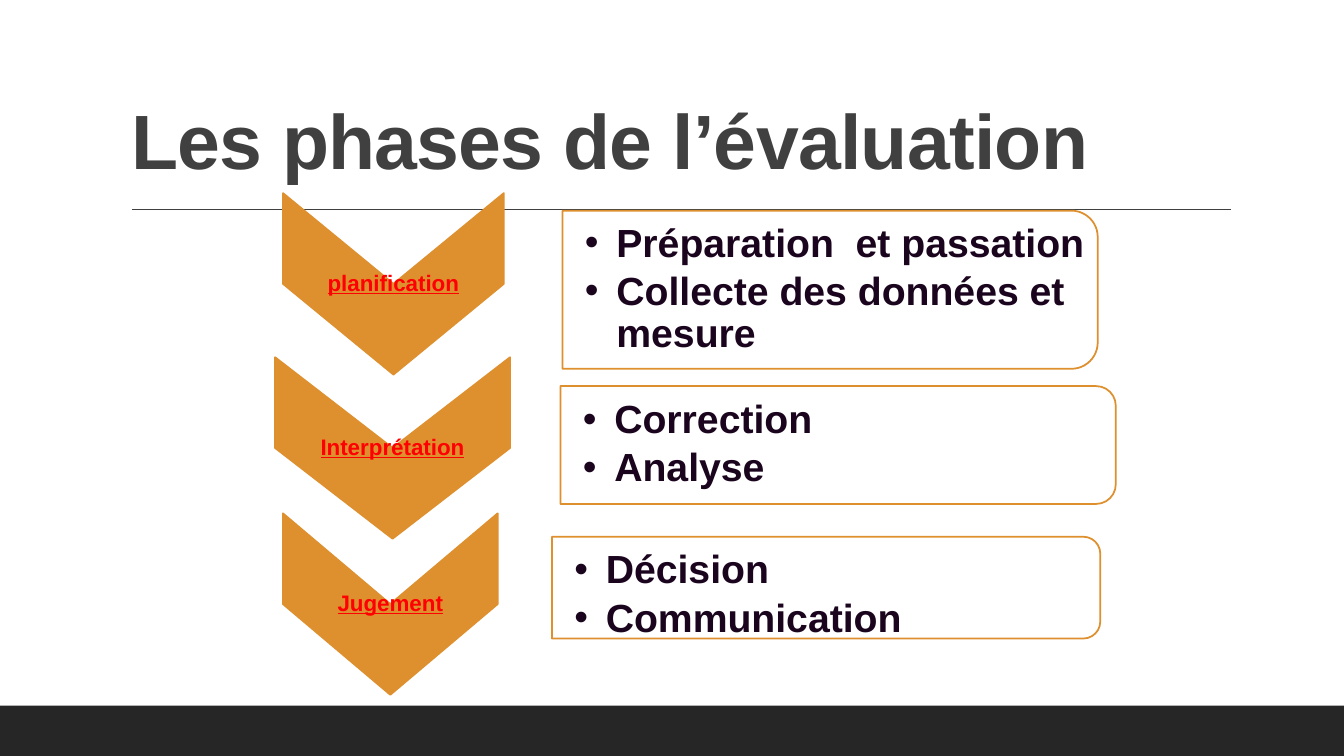
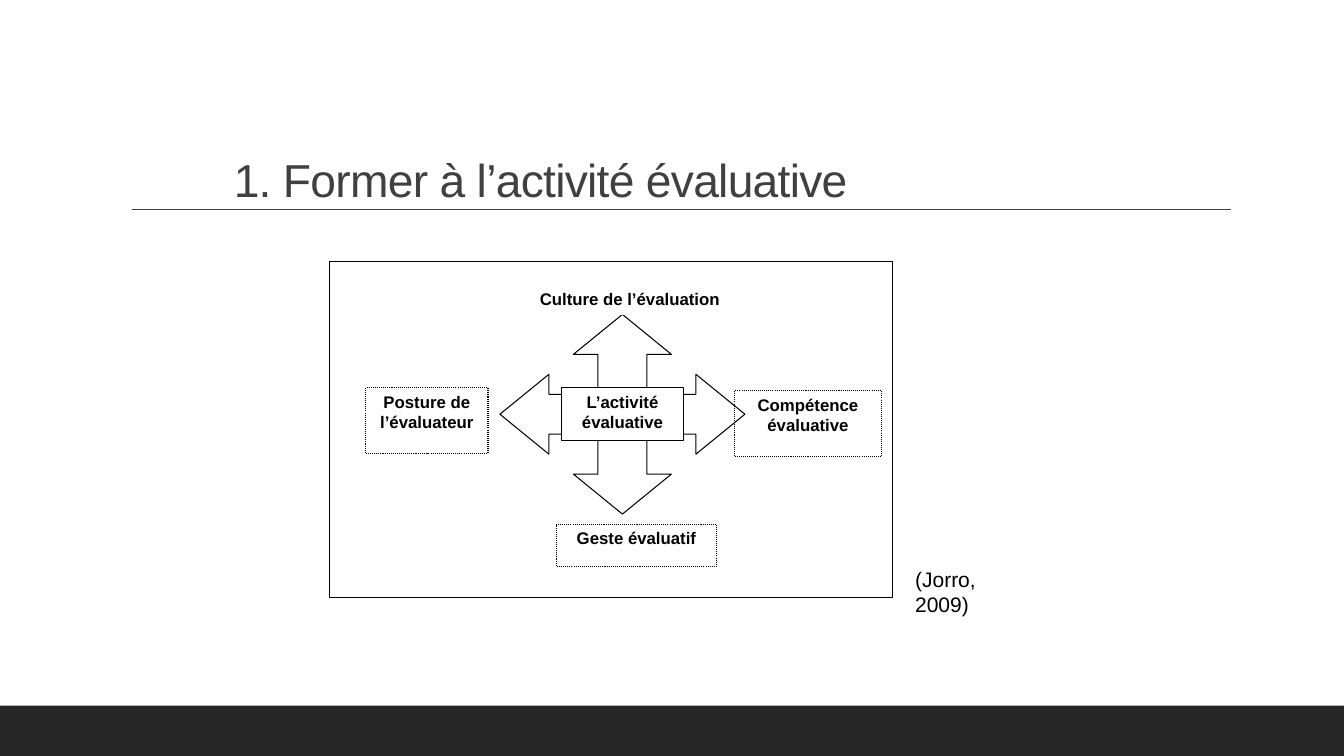
from lxml.etree import SubElement
from pptx import Presentation
from pptx.dml.color import RGBColor
from pptx.enum.dml import MSO_LINE
from pptx.enum.shapes import MSO_CONNECTOR, MSO_SHAPE
from pptx.enum.text import MSO_ANCHOR, MSO_AUTO_SIZE, PP_ALIGN
from pptx.oxml.ns import qn
from pptx.util import Pt

COLORS = {
    "paper": "FFFFFF",
    "band": "262626",
    "title": "404040",
    "accent": "DE8F2E",
    "label": "FF0000",
    "list": "1B051E",
    "ink": "000000",
}
FONT = "Arial"
COMPARISON_LAYOUT = 4
TITLE_ONLY_LAYOUT = 5


def color(name):
    return RGBColor.from_string(COLORS[name])


class Deck:
    def __init__(self):
        self.presentation = Presentation()
        self.presentation.slide_width = Pt(960)
        self.presentation.slide_height = Pt(540)
        self.slide = None

    def add_slide(self, layout_index):
        layout = self.presentation.slide_layouts[layout_index]
        self.slide = self.presentation.slides.add_slide(layout)

    def decorate_master(self):
        band = self.shape(MSO_SHAPE.RECTANGLE, (0, 504, 960, 36), "band")
        rule = self.slide.shapes.add_connector(
            MSO_CONNECTOR.STRAIGHT, Pt(94.3), Pt(149.8), Pt(879.1), Pt(149.8)
        )
        rule.line.color.rgb = color("title")
        rule.line.width = Pt(1)
        SubElement(rule.element.spPr, qn("a:effectLst"))
        master_tree = self.presentation.slide_master.shapes.element
        for number, item in enumerate((band, rule)):
            item.element.xpath(".//p:cNvPr")[0].set("id", str(100 + number))
            master_tree.insert(2 + number, item.element)

    def place(self, shape, box):
        shape.left, shape.top, shape.width, shape.height = map(Pt, box)

    def paint(self, shape, fill=None, line=None, width=0.75, dotted=False):
        shape.shadow.inherit = False
        if fill:
            shape.fill.solid()
            shape.fill.fore_color.rgb = color(fill)
        else:
            shape.fill.background()
        if line:
            shape.line.color.rgb = color(line)
            shape.line.width = Pt(width)
            if dotted:
                shape.line.dash_style = MSO_LINE.ROUND_DOT
        else:
            shape.line.fill.background()

    def shape(self, kind, box, fill=None, line=None, width=0.75, dotted=False):
        shape = self.slide.shapes.add_shape(kind, *map(Pt, box))
        self.paint(shape, fill, line, width, dotted)
        return shape

    def turned_shape(self, kind, box, fill):
        left, top, width, height = box
        shift = (width - height) / 2
        turned_box = (left + shift, top - shift, height, width)
        shape = self.shape(kind, turned_box, fill, "accent", 1.25)
        shape.rotation = 90

    def frame(self, shape, anchor=MSO_ANCHOR.TOP, insets=(7.2, 3.6, 7.2, 3.6)):
        frame = shape.text_frame
        frame.word_wrap = True
        frame.auto_size = MSO_AUTO_SIZE.NONE
        frame.vertical_anchor = anchor
        frame.margin_left, frame.margin_top, frame.margin_right, frame.margin_bottom = map(Pt, insets)
        return frame

    def add_text(self, frame, lines, size, ink, bold=False, underline=False,
                 align=PP_ALIGN.LEFT, spacing=1.0, after=0):
        paragraphs = []
        for number, line in enumerate(lines):
            paragraph = frame.add_paragraph() if number else frame.paragraphs[0]
            paragraph.alignment = align
            paragraph.line_spacing = spacing
            paragraph.space_before = Pt(0)
            paragraph.space_after = Pt(after)
            run = paragraph.add_run()
            run.text = line
            run.font.name = FONT
            run.font.size = Pt(size)
            run.font.bold = bold
            run.font.underline = underline
            run.font.color.rgb = color(ink)
            paragraphs.append(paragraph)
        return paragraphs

    def title(self, text, box, size, bold=False):
        title = self.slide.shapes.title
        self.place(title, box)
        frame = self.frame(title, MSO_ANCHOR.BOTTOM)
        paragraph = self.add_text(frame, [text], size, "title", bold, spacing=0.9)[0]
        paragraph.runs[0]._r.get_or_add_rPr().set("spc", "-50")

    def text_box(self, lines, box, size, ink, anchor=MSO_ANCHOR.TOP,
                 insets=(7.2, 3.6, 7.2, 3.6), **style):
        text_box = self.slide.shapes.add_textbox(*map(Pt, box))
        self.add_text(self.frame(text_box, anchor, insets), lines, size, ink, **style)

    def chevron(self, label, center_x, center_y, width):
        height = 129.6
        box = (center_x - width / 2, center_y - height / 2, width, height)
        self.turned_shape(MSO_SHAPE.CHEVRON, box, "accent")
        self.text_box([label], box, 16, "label", MSO_ANCHOR.MIDDLE, (0.7,) * 4,
                      bold=True, underline=True, align=PP_ALIGN.CENTER, spacing=0.9)

    def bullet_card(self, placeholder_index, items, box, text_shift):
        self.turned_shape(MSO_SHAPE.ROUND_2_SAME_RECTANGLE, box, "paper")
        left, top, width, height = box
        body = self.slide.placeholders[placeholder_index]
        self.place(body, (left, top + text_shift, width - 5, height))
        self.slide.shapes.element.append(body.element)
        frame = self.frame(body, MSO_ANCHOR.MIDDLE, (16, 1.4, 1.4, 1.4))
        for paragraph in self.add_text(frame, items, 28, "list", True, spacing=0.9, after=4.2):
            properties = paragraph._p.get_or_add_pPr()
            properties.set("marL", str(Pt(22.5)))
            properties.set("indent", str(-Pt(22.5)))
            SubElement(properties, qn("a:buFont")).set("typeface", FONT)
            SubElement(properties, qn("a:buChar")).set("char", "•")

    def label_box(self, lines, box, fill="paper", line="ink", dotted=False):
        shape = self.shape(MSO_SHAPE.RECTANGLE, box, fill, line, dotted=dotted)
        frame = self.frame(shape, insets=(5, 2.9, 5, 2.9))
        self.add_text(frame, lines, 12, "ink", True, align=PP_ALIGN.CENTER)

    def four_way_arrow(self, center_x, center_y, half_width, half_height):
        arm = [(-0.2, -0.2), (-0.2, -0.6), (-0.4, -0.6), (0, -1), (0.4, -0.6), (0.2, -0.6)]
        outline = []
        for _ in range(4):
            outline += arm
            arm = [(-y, x) for x, y in arm]
        points = [(Pt(center_x + x * half_width), Pt(center_y + y * half_height))
                  for x, y in outline]
        builder = self.slide.shapes.build_freeform(*points[0])
        builder.add_line_segments(points[1:], close=True)
        self.paint(builder.convert_to_shape(), "paper", "ink")


def phases_slide(deck):
    deck.title("Les phases de l’évaluation", (86.4, 22.3, 792, 114.5), 55, True)
    phases = [
        (("planification", 281, 202.8, 157.7), 2,
         ["Préparation  et passation", "Collecte des données et mesure"],
         (401.8, 150.5, 382.3, 113), 0),
        (("Interprétation", 280.4, 320, 167.8), 3,
         ["Correction", "Analyse"], (400.3, 275.8, 396.7, 84.2), 0),
        (("Jugement", 278.8, 431.5, 153.4), 4,
         ["Décision", "Communication"], (394.2, 383.4, 391.7, 72.7), 5.5),
    ]
    for chevron, *card in phases:
        deck.chevron(*chevron)
        deck.bullet_card(*card)
    unused = deck.slide.placeholders[1].element
    unused.getparent().remove(unused)


def activity_slide(deck):
    deck.title("1. Former à l’activité évaluative", (159.8, 103.7, 507.6, 48.2), 33)
    deck.shape(MSO_SHAPE.RECTANGLE, (235.4, 187, 402, 240), "paper", "ink")
    deck.four_way_arrow(444.6, 295.9, 87.5, 71.3)
    deck.label_box(["Posture de l’évaluateur"], (261.2, 277, 87.4, 47), dotted=True)
    deck.label_box(["Compétence", "évaluative"], (524.7, 279.2, 105, 47.2),
                   fill=None, dotted=True)
    deck.label_box(["Culture de l’évaluation"], (375, 203, 149.8, 21.8), line="paper")
    deck.label_box(["L’activité évaluative"], (401, 277, 87.4, 37.5))
    deck.label_box(["Geste évaluatif"], (397.4, 374.4, 114.5, 30), dotted=True)
    deck.text_box(["(Jorro, 2009)"], (646.6, 401, 88.6, 44), 15, "ink")


def main():
    deck = Deck()
    deck.add_slide(COMPARISON_LAYOUT)
    deck.decorate_master()
    phases_slide(deck)
    deck.add_slide(TITLE_ONLY_LAYOUT)
    activity_slide(deck)
    deck.presentation.save("out.pptx")


if __name__ == "__main__":
    main()
